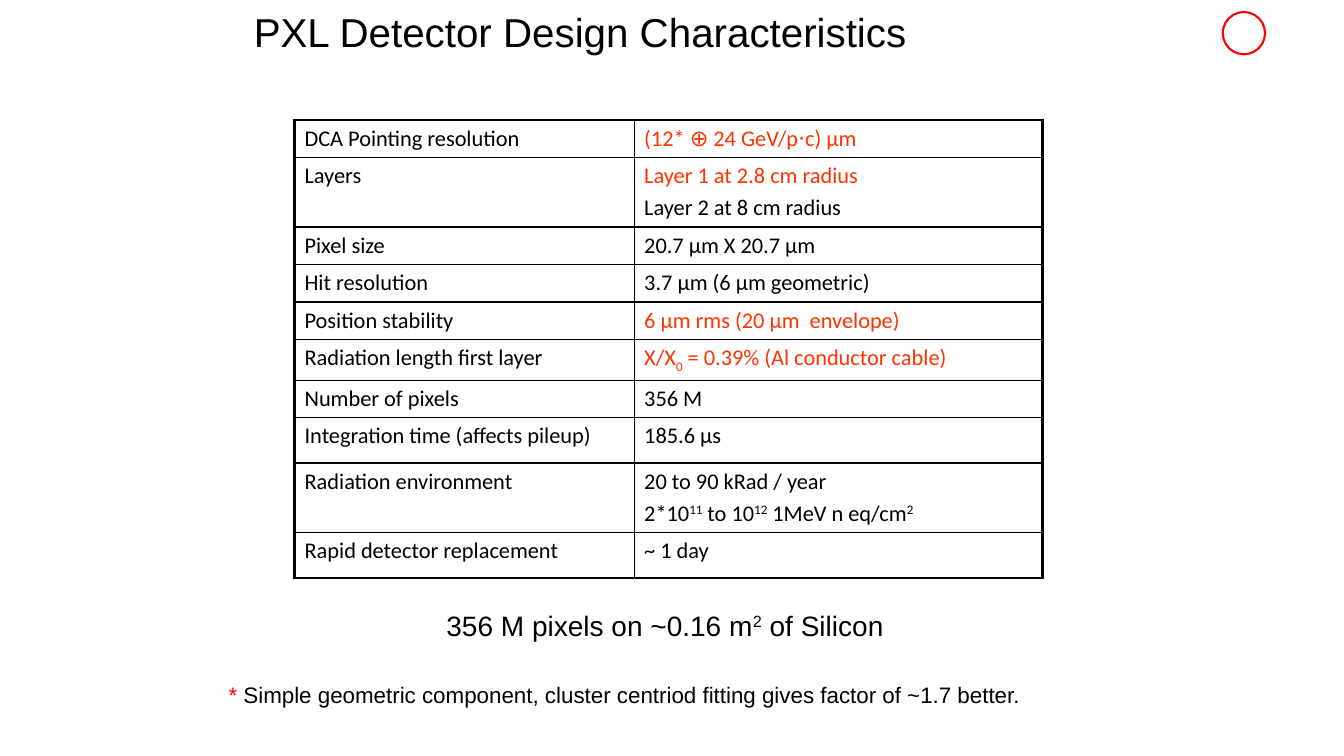
from dataclasses import dataclass
from typing import Any

from lxml.etree import SubElement
from pptx import Presentation
from pptx.dml.color import RGBColor
from pptx.enum.shapes import MSO_SHAPE
from pptx.enum.text import MSO_ANCHOR
from pptx.oxml.ns import qn
from pptx.util import Pt

BLACK = RGBColor(0, 0, 0)
RED = RGBColor(0xFF, 0, 0)
ORANGE = RGBColor(0xFF, 0x33, 0)

SUB, SUPER = -25000, 30000
THIN, THICK = 1, 2.25


@dataclass
class Bit:
    text: str
    color: RGBColor = BLACK
    base: int = 0


@dataclass
class Row:
    label: str
    lines: list[list[Bit]]
    height: float = 26.6


@dataclass
class Note:
    box: tuple[float, float, float, float]
    bits: list[Bit]
    size: float
    wrap: bool = True
    space: float = 1.0
    anchor: MSO_ANCHOR = MSO_ANCHOR.TOP


ROWS = [
    Row("DCA Pointing resolution", [[Bit("(12* ⊕ 24 GeV/p⋅c) μm", ORANGE)]]),
    Row("Layers", [[Bit("Layer 1 at 2.8 cm radius", ORANGE)],
                   [Bit("Layer 2 at 8 cm radius")]], 49.7),
    Row("Pixel size", [[Bit("20.7 μm X 20.7 μm")]]),
    Row("Hit resolution", [[Bit("3.7 μm (6 μm geometric)")]]),
    Row("Position stability", [[Bit("6 μm rms (20 μm  envelope)", ORANGE)]]),
    Row("Radiation length first layer",
        [[Bit("X/X", ORANGE), Bit("0", ORANGE, SUB),
          Bit(" = 0.39% (Al conductor cable)", ORANGE)]]),
    Row("Number of pixels", [[Bit("356 M")]]),
    Row("Integration time (affects pileup)", [[Bit("185.6 μs")]], 32.4),
    Row("Radiation environment",
        [[Bit("20 to 90 kRad / year")],
         [Bit("2*10"), Bit("11", base=SUPER), Bit(" to 10"), Bit("12", base=SUPER),
          Bit(" 1MeV n eq/cm"), Bit("2", base=SUPER)]], 49.7),
    Row("Rapid detector replacement", [[Bit("~ 1 day")]], 32.4),
]
COLS = (242.6, 291.6)

NOTES = [
    Note((174.2, 5.8, 600, 38.2), [Bit("PXL Detector Design Characteristics")],
         28.8, space=0.9, anchor=MSO_ANCHOR.MIDDLE),
    Note((311.8, 435.6, 347.8, 26.6),
         [Bit("356 M pixels on ~0.16 m"), Bit("2", base=SUPER), Bit(" of Silicon")],
         20, space=0.8),
    Note((156.2, 483.1, 583.9, 26.6),
         [Bit("*", RED),
          Bit(" Simple geometric component, cluster centriod fitting"
              " gives factor of ~1.7 better.")], 16, wrap=False),
]


def apply(item: Any, form: dict[str, Any]) -> None:
    for name, value in form.items():
        setattr(item, name, value)


def write(para: Any, bits: list[Bit], font: str, size: float) -> None:
    for bit in bits:
        run = para.add_run()
        run.text = bit.text
        apply(run.font, {"name": font, "size": Pt(size)})
        run.font.color.rgb = bit.color
        if bit.base:
            run.font._element.set("baseline", str(bit.base))


def add_note(slide: Any, note: Note) -> None:
    frame = slide.shapes.add_textbox(*map(Pt, note.box)).text_frame
    apply(frame, {"word_wrap": note.wrap, "vertical_anchor": note.anchor})
    para = frame.paragraphs[0]
    para.line_spacing = note.space
    write(para, note.bits, "Arial", note.size)


def edge(cell: Any, side: str, width: float) -> None:
    """Draw one black border; side is L, R, T or B."""
    line = SubElement(cell._tc.get_or_add_tcPr(), qn(f"a:ln{side}"), w=str(Pt(width)))
    fill = SubElement(line, qn("a:solidFill"))
    SubElement(fill, qn("a:srgbClr"), val=str(BLACK))


def fill_cell(cell: Any, lines: list[list[Bit]]) -> None:
    apply(cell, {"margin_left": Pt(7.2), "margin_right": Pt(7.2),
                 "margin_top": Pt(3.6), "margin_bottom": Pt(3.6)})
    frame = cell.text_frame
    for i, bits in enumerate(lines):
        para = frame.add_paragraph() if i else frame.paragraphs[0]
        if i:
            para.space_before = Pt(3.2)
        write(para, bits, "Calibri", 16)


def add_specs(slide: Any) -> None:
    high = sum(row.height for row in ROWS)
    table = slide.shapes.add_table(len(ROWS), len(COLS), Pt(210.4), Pt(85.7),
                                   Pt(sum(COLS)), Pt(high)).table
    apply(table, {"first_row": False, "horz_banding": False})
    for col, width in zip(table.columns, COLS):
        col.width = Pt(width)
    for r, row in enumerate(ROWS):
        table.rows[r].height = Pt(row.height)
        for c, lines in enumerate(([[Bit(row.label)]], row.lines)):
            cell = table.cell(r, c)
            fill_cell(cell, lines)
            outer = {"L": c == 0, "R": c == len(COLS) - 1,
                     "T": r == 0, "B": r == len(ROWS) - 1}
            for side, thick in outer.items():
                edge(cell, side, THICK if thick else THIN)
            cell.fill.background()


def add_badge(slide: Any) -> None:
    badge = slide.shapes.add_shape(MSO_SHAPE.OVAL, Pt(873.4), Pt(8.6), Pt(30.2), Pt(30.2))
    badge.shadow.inherit = False
    badge.fill.background()
    badge.line.color.rgb = RED
    badge.line.width = Pt(1.5)


def main() -> None:
    deck = Presentation()
    apply(deck, {"slide_width": Pt(960), "slide_height": Pt(540)})
    slide = deck.slides.add_slide(deck.slide_layouts[6])
    add_badge(slide)
    add_specs(slide)
    for note in NOTES:
        add_note(slide, note)
    deck.save("out.pptx")


if __name__ == "__main__":
    main()
